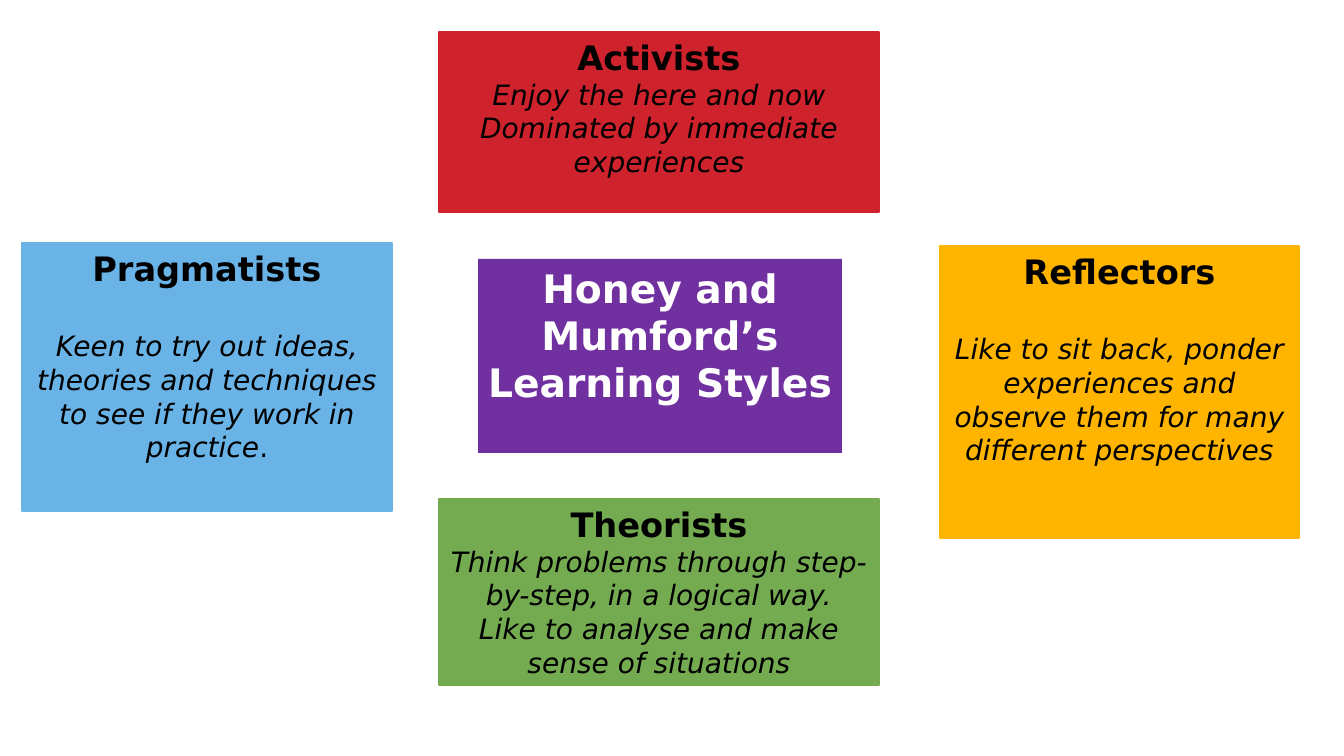
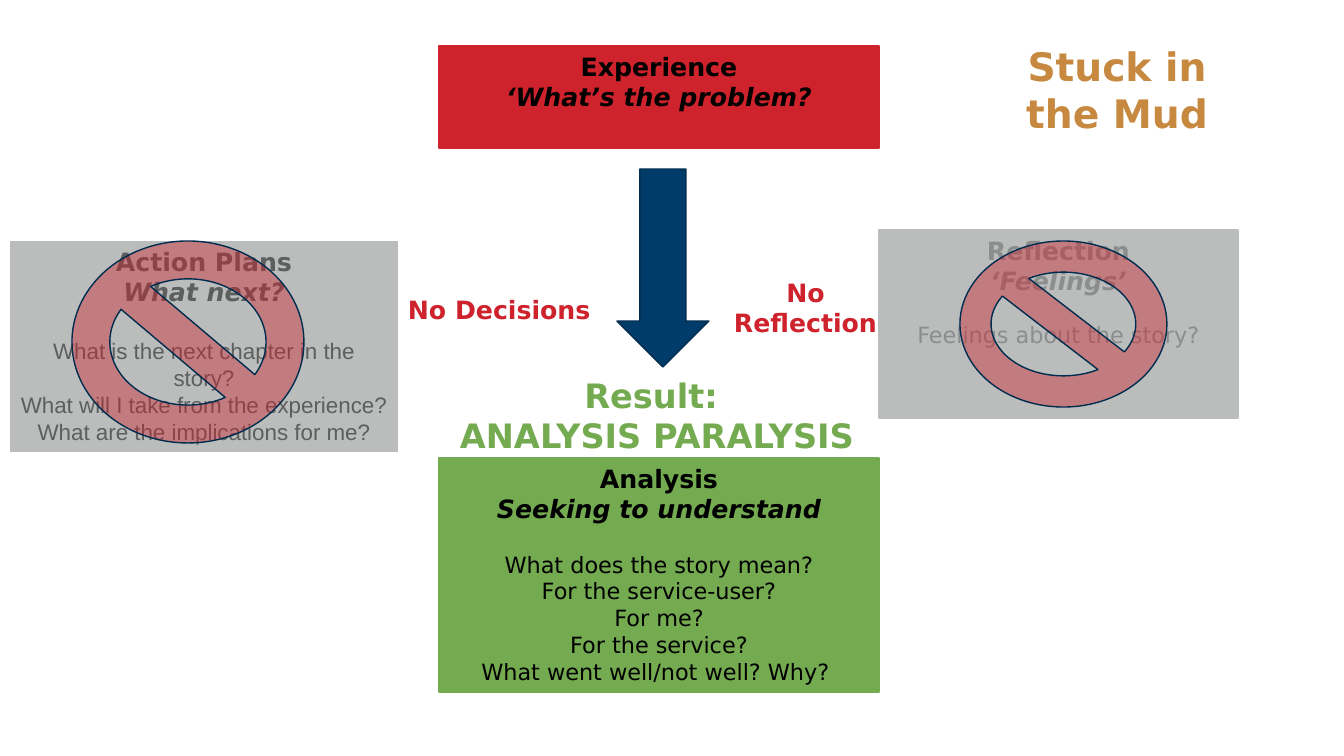
from lxml import etree
from pptx import Presentation
from pptx import util as u
from pptx.dml.color import RGBColor
from pptx.enum import shapes, text as t
from pptx.oxml.ns import qn

EMU_PER_PX = 914400 / 100.8
RED, GREEN, GREY, NAVY = "CE222C", "74AA50", "BBBCBC", "002C4E"


def px(*lengths):
    """Turn pixel lengths into EMU."""
    return [u.Emu(round(length * EMU_PER_PX)) for length in lengths]


def rgb(code):
    """Turn a hex string into a colour."""
    return RGBColor.from_string(code)


def write(shape, text, *, size, color="000000", bold=False, italic=False, tail="",
          font="DejaVu Sans", before=0, spacing=None, align=t.PP_ALIGN.CENTER):
    """Append each line of the text to a shape as a formatted paragraph."""
    frame = shape.text_frame
    for index, line in enumerate(text.split("\n")):
        paragraph = frame.paragraphs[0] if not frame.text else frame.add_paragraph()
        paragraph.alignment = align
        paragraph.space_before = u.Pt(0 if index else before)
        if spacing:
            paragraph.line_spacing = spacing
        for words, slanted in ((line, italic), (tail, False)):
            if words:
                run = paragraph.add_run()
                run.text = words
                run.font.name, run.font.size = font, u.Pt(size)
                run.font.bold, run.font.italic = bold, slanted
                run.font.color.rgb = rgb(color)


class Deck:
    """Hold the style and the current slide."""

    def __init__(self):
        """Start a wide presentation."""
        self.presentation = Presentation()
        self.presentation.slide_width, self.presentation.slide_height = px(1344, 756)
        self.slide = None

    def frame(self, shape, wrap=True):
        """Set the text frame to a fixed size with its text at the top."""
        frame = shape.text_frame
        frame.auto_size = t.MSO_AUTO_SIZE.NONE
        frame.word_wrap = wrap
        frame.vertical_anchor = t.MSO_ANCHOR.TOP
        return shape

    def new_slide(self, title, place, color, fill=None):
        """Add a slide with its title."""
        self.slide = self.presentation.slides.add_slide(self.presentation.slide_layouts[5])
        shape = self.frame(self.slide.shapes.title)
        shape.left, shape.top, shape.width, shape.height = px(*place)
        if fill:
            shape.fill.solid()
            shape.fill.fore_color.rgb = rgb(fill)
        write(shape, title, size=28, color=color, bold=True)

    def shape(self, kind, place, fill, line=None, alpha=None):
        """Add a filled preset shape."""
        shape = self.slide.shapes.add_shape(kind, *px(*place))
        shape.shadow.inherit = False
        shape.fill.solid()
        shape.fill.fore_color.rgb = rgb(fill)
        if alpha:
            tint = shape.fill._xPr.find(qn("a:solidFill"))[0]
            etree.SubElement(tint, qn("a:alpha")).set("val", str(alpha * 1000))
        if line:
            shape.line.color.rgb = rgb(line)
            shape.line.width = u.Pt(1)
        else:
            shape.line.fill.background()
        return shape

    def box(self, place, fill, outlined=True):
        """Add a rectangle for text."""
        line = fill if outlined else None
        return self.frame(self.shape(shapes.MSO_SHAPE.RECTANGLE, place, fill, line))

    def stage(self, place, fill, heading, question, color="000000", outlined=True):
        """Add a box with the heading and question of one stage."""
        box = self.box(place, fill, outlined)
        write(box, heading, size=18, color=color, bold=True)
        write(box, question, size=18, color=color, bold=True, italic=True)
        return box

    def label(self, place, text, color, size=18, wrap=True, align=t.PP_ALIGN.CENTER):
        """Add a bold text label."""
        box = self.frame(self.slide.shapes.add_textbox(*px(*place)), wrap)
        write(box, text, size=size, color=color, bold=True, align=align)

    def ban(self, place):
        """Add a see-through no sign."""
        self.shape(shapes.MSO_SHAPE.NO_SYMBOL, place, RED, NAVY, alpha=41)


def learning_styles(deck):
    """Build the slide of four learning styles."""
    deck.new_slide("Honey and Mumford’s Learning Styles", (478, 259, 364, 194),
                   "FFFFFF", "7030A0")
    styles = [
        ("Reflectors", "Like to sit back, ponder experiences and observe them for many "
         "different perspectives", "", (940, 246, 359, 292), "FFB500", 29),
        ("Activists", "Enjoy the here and now\nDominated by immediate experiences",
         "", (439, 32, 440, 180), RED, 0),
        ("Theorists", "Think problems through step-by-step, in a logical way.\n"
         "Like to analyse and make sense of situations",
         "", (439, 499, 440, 186), GREEN, 0),
        ("Pragmatists", "Keen to try out ideas, theories and techniques to see if they "
         "work in practice", ".", (22, 243, 370, 268), "69B3E7", 29),
    ]
    for name, habits, tail, place, fill, gap in styles:
        box = deck.box(place, fill)
        write(box, name, size=24, bold=True)
        write(box, habits, size=20, italic=True, tail=tail, before=gap)


def stuck_in_the_mud(deck):
    """Build the slide of a cycle that stops at analysis."""
    deck.new_slide("Stuck in the Mud", (1006, 37, 222, 105), "C6893F")
    reflection = deck.stage((879, 230, 359, 188), GREY, "Reflection", "‘Feelings’", "8C8D8D")
    write(reflection, "Feelings about the story?", size=16, color="8C8D8D",
          before=22, spacing=0.8)
    deck.stage((439, 46, 440, 102), RED, "Experience", "‘What’s the problem?")
    analysis = deck.stage((439, 458, 440, 234), GREEN, "Analysis", "Seeking to understand")
    write(analysis, "What does the story mean?\nFor the service-user?\nFor me?\n"
          "For the service?\nWhat went well/not well? Why? ", size=16, before=19.5)
    deck.label((398, 289, 205, 40), "No Decisions", RED, wrap=False, align=t.PP_ALIGN.LEFT)
    deck.label((718, 272, 175, 72), "No Reflection", RED)
    plans = deck.stage((10, 241, 388, 211), GREY, "Action Plans", "What next?",
                       "5D5E5E", outlined=False)
    write(plans, "What is the next chapter in the story?\n"
          "What will I take from the experience?\nWhat are the implications for me?",
          size=16, color="5D5E5E", font="Arial", before=22)
    deck.ban((72, 241, 232, 202))
    deck.ban((960, 241, 207, 166))
    deck.shape(shapes.MSO_SHAPE.DOWN_ARROW, (617, 169, 92, 198), "003C69", NAVY)
    deck.label((435, 370, 444, 92), "Result: \nANALYSIS PARALYSIS", GREEN, size=24, wrap=False)


def main():
    """Build and save the presentation."""
    deck = Deck()
    learning_styles(deck)
    stuck_in_the_mud(deck)
    deck.presentation.save("out.pptx")


if __name__ == "__main__":
    main()
